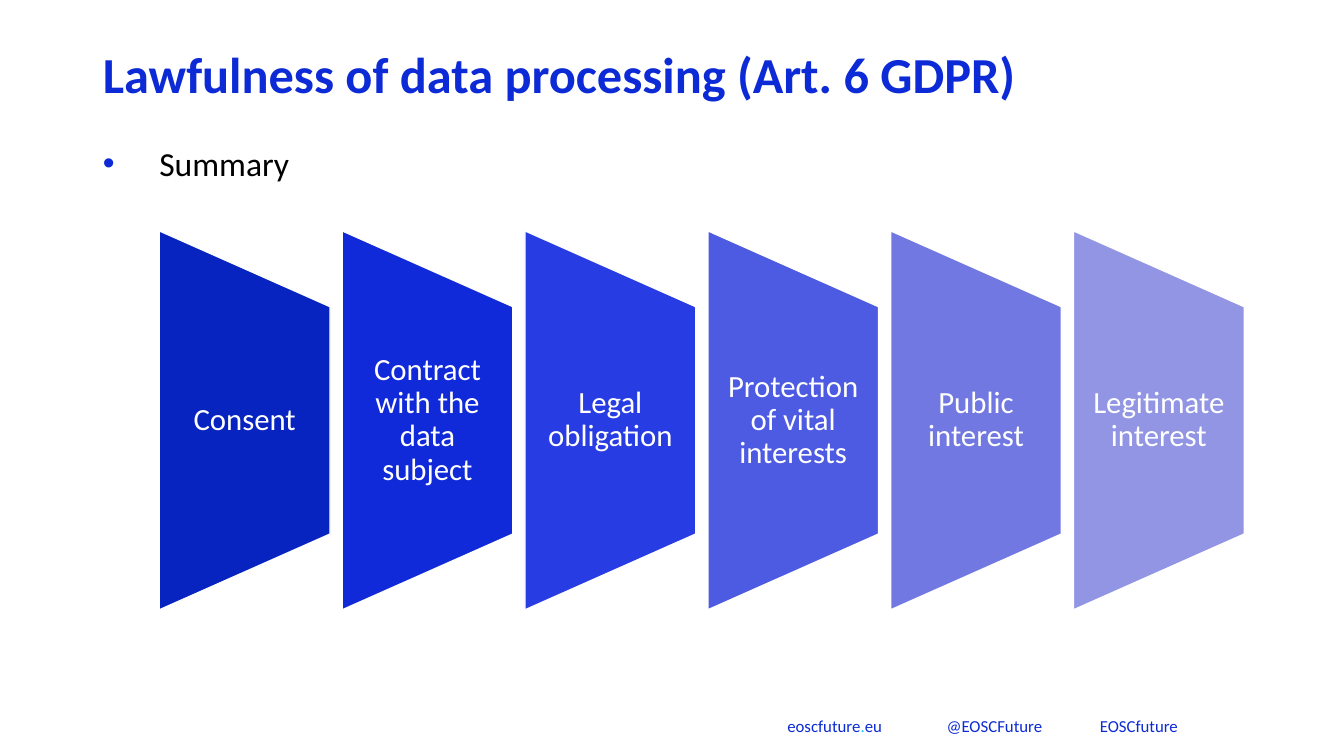
from lxml import etree
from pptx import Presentation
from pptx import util as u
from pptx.dml.color import RGBColor
from pptx.enum import shapes, text
from pptx.oxml.ns import qn

WIDE, HIGH = 13.33, 7.5
FONT = "Calibri"
INK = {"blue": "0C2AD5", "cyan": "08C8E9", "black": "000000", "white": "FFFFFF"}
BASES = {
    "Consent": "0724C0",
    "Contract with the data subject": "112AD9",
    "Legal obligation": "283CE4",
    "Protection of vital interests": "4D5AE2",
    "Public interest": "7178E1",
    "Legitimate interest": "9295E3",
}


def rgb(code):
    return RGBColor.from_string(code)


def place(shape, box):
    shape.left, shape.top, shape.width, shape.height = map(u.Inches, box)


def style(para, size, color, bold=False):
    for run in para.runs:
        font = run.font
        font.name, font.size, font.bold = FONT, u.Pt(size), bold
        font.color.rgb = rgb(color)


def add(node, tag, **attrs):
    return etree.SubElement(node, qn(tag), attrs)


def head(slide, box, words):
    shape = slide.shapes.title
    place(shape, box)
    frame = shape.text_frame
    frame.text = words
    frame.auto_size = text.MSO_AUTO_SIZE.NONE
    frame.vertical_anchor = text.MSO_ANCHOR.MIDDLE
    para = frame.paragraphs[0]
    para.alignment = text.PP_ALIGN.LEFT
    para.line_spacing = 0.9
    style(para, 36, INK["blue"], True)


def body(slide, box, words):
    shape = slide.placeholders[1]
    place(shape, box)
    frame = shape.text_frame
    frame.text = words
    frame.auto_size = text.MSO_AUTO_SIZE.NONE
    para = frame.paragraphs[0]
    para.space_before = u.Pt(0)
    props = para._p.get_or_add_pPr()
    hang = u.Inches(0.56)
    props.set("marL", str(hang))
    props.set("indent", str(-hang))
    add(add(props, "a:buClr"), "a:srgbClr", val=INK["blue"])
    add(props, "a:buFont", typeface="Arial")
    add(props, "a:buChar", char="•")
    style(para, 24, INK["black"])


def panel(slide, box, words, fill):
    """A trapezoid turned to face right, with an upright label over it."""
    left, top, wide, high = box
    shape = slide.shapes.add_shape(
        shapes.MSO_SHAPE.FLOWCHART_MANUAL_OPERATION, 0, 0, 0, 0)
    place(shape, (left + (wide - high) / 2, top + (high - wide) / 2, high, wide))
    shape.rotation = 270
    shape.shadow.inherit = False
    shape.fill.solid()
    shape.fill.fore_color.rgb = rgb(fill)
    shape.line.color.rgb = rgb(INK["white"])
    shape.line.width = u.Pt(1)

    label = slide.shapes.add_textbox(0, 0, 0, 0)
    place(label, (left, top + high / 5, wide, high * 3 / 5))
    frame = label.text_frame
    frame.word_wrap = True
    frame.vertical_anchor = text.MSO_ANCHOR.MIDDLE
    frame.margin_left = frame.margin_right = u.Inches(0.15)
    frame.margin_top = frame.margin_bottom = 0
    frame.text = words
    para = frame.paragraphs[0]
    para.alignment = text.PP_ALIGN.CENTER
    para.line_spacing = 0.9
    style(para, 22, INK["white"])


def row(slide, box, gap):
    left, top, wide, high = box
    step = (wide + gap) / len(BASES)
    for col, (words, fill) in enumerate(BASES.items()):
        panel(slide, (left + col * step, top, step - gap, high), words, fill)


def foot(slide, box):
    shape = slide.shapes.add_textbox(0, 0, 0, 0)
    place(shape, box)
    frame = shape.text_frame
    frame.word_wrap = True
    para = frame.paragraphs[0]
    tabs = add(para._p.get_or_add_pPr(), "a:tabLst")
    for stop in (1.58, 3.1):
        add(tabs, "a:tab", pos=str(u.Inches(stop)), algn="l")
    for words in ("eoscfuture", ".", "eu\t@EOSCFuture\tEOSCfuture"):
        para.add_run().text = words
    style(para, 12, INK["blue"])
    para.runs[1].font.color.rgb = rgb(INK["cyan"])


def main():
    deck = Presentation()
    deck.slide_width, deck.slide_height = u.Inches(WIDE), u.Inches(HIGH)
    slide = deck.slides.add_slide(deck.slide_layouts[1])
    left, wide = 0.92, 12.24
    foot(slide, (7.71, 7.05, 4.21, 0.3))
    head(slide, (left, 0.17, wide, 1.19), "Lawfulness of data processing (Art. 6 GDPR)")
    body(slide, (left, 1.37, wide, 5.47), "Summary")
    row(slide, (1.58, 2.29, 10.76, 3.76), 0.12)
    deck.save("out.pptx")


if __name__ == "__main__":
    main()
